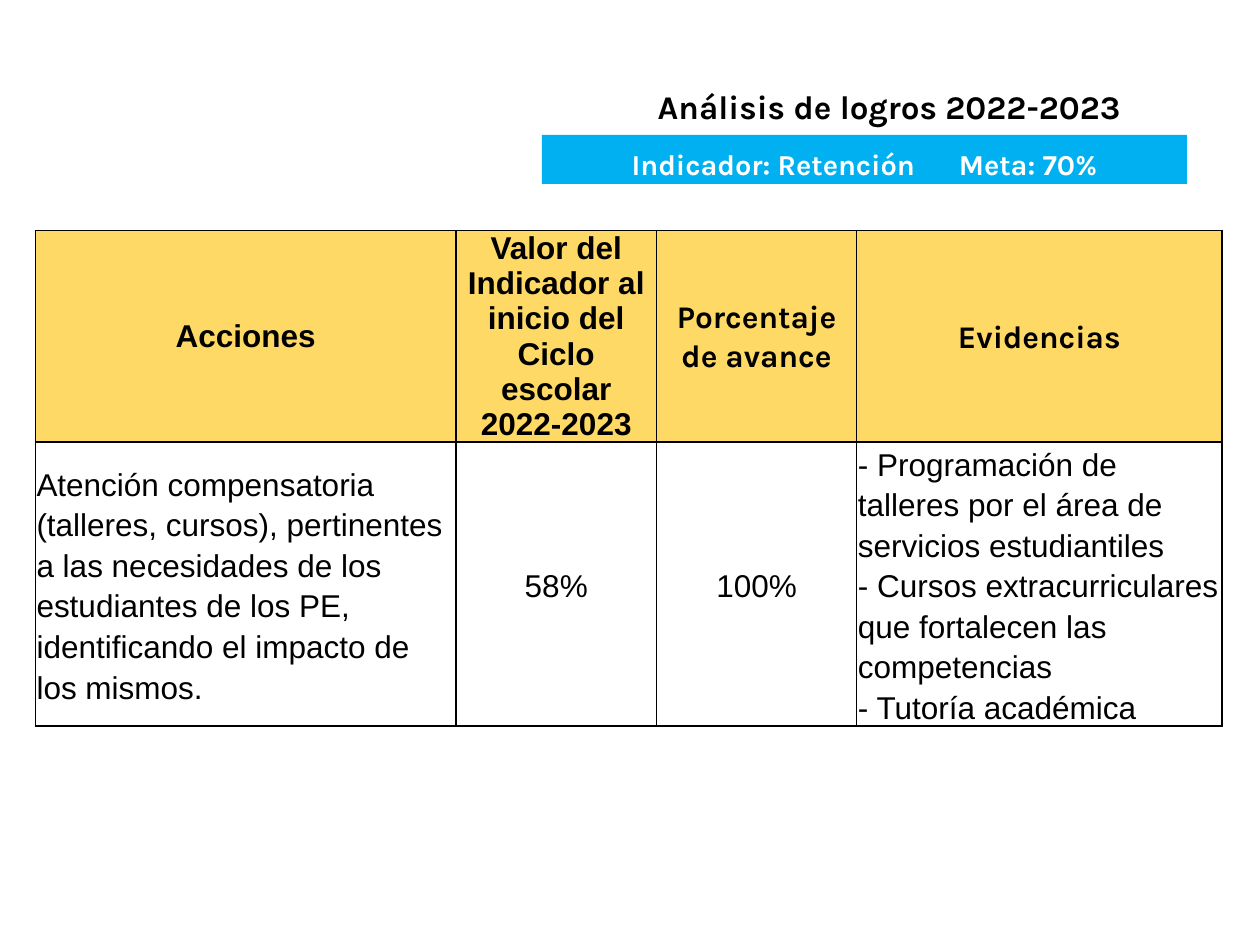
from pptx import Presentation
from pptx import util as u
from pptx.dml.color import RGBColor
from pptx.enum import shapes, text
from pptx.oxml import parse_xml
from pptx.oxml.ns import nsdecls

COLORS = {"white": "FFFFFF", "black": "000000", "gold": "FFD965", "blue": "00B0F0"}
CENTER, LEFT = text.PP_ALIGN.CENTER, text.PP_ALIGN.LEFT
MIDDLE = text.MSO_ANCHOR.MIDDLE
BODY = dict(font="Arial", size=18, bold=False, color="black", spacing=1.15)
HEADER = BODY | dict(bold=True, align=CENTER, spacing=1.0)
KARLA_HEADER = HEADER | dict(font="Karla", spacing=1.07)
TITLE = HEADER | dict(font="Karla", size=18.9, spacing=0.9)
BANNER = TITLE | dict(size=16.5, color="white", spacing=1.15)


class SlideBuilder:
    columns, rows = 100, 75

    def __init__(self, deck):
        self.deck = deck
        self.slide = deck.slides.add_slide(deck.slide_layouts[5])

    def frame(self, left, top, width, height):
        column = self.deck.slide_width / self.columns
        row = self.deck.slide_height / self.rows
        return [u.Emu(round(n * unit)) for n, unit in
                ((left, column), (top, row), (width, column), (height, row))]

    def fill(self, target, color):
        target.fill.solid()
        target.fill.fore_color.rgb = RGBColor.from_string(COLORS[color])

    def add_span(self, para, wording, style):
        para.alignment = style.get("align", LEFT)
        para.line_spacing = style["spacing"]
        span = para.add_run()
        span.text = wording
        values = dict(name=style["font"], size=u.Pt(style["size"]), bold=style["bold"])
        for name, value in values.items():
            setattr(span.font, name, value)
        span.font.color.rgb = RGBColor.from_string(COLORS[style["color"]])
        return span

    def title(self, wording, place, style):
        box = self.slide.shapes.title
        for name, value in zip(("left", "top", "width", "height"), self.frame(*place)):
            setattr(box, name, value)
        self.fill(box, "white")
        box.text_frame.vertical_anchor = MIDDLE
        self.add_span(box.text_frame.paragraphs[0], wording, style)

    def banner(self, label, goal, gap, place, style):
        box = self.slide.shapes.add_shape(shapes.MSO_SHAPE.RECTANGLE, *self.frame(*place))
        box.shadow.inherit = False
        box.line.fill.background()
        self.fill(box, "blue")
        frame = box.text_frame
        settings = dict(word_wrap=True, vertical_anchor=text.MSO_ANCHOR.TOP,
                        auto_size=text.MSO_AUTO_SIZE.SHAPE_TO_FIT_TEXT)
        for name, value in settings.items():
            setattr(frame, name, value)
        para = frame.paragraphs[0]
        self.add_span(para, label, style)
        space = self.add_span(para, " ", style)
        space._r.get_or_add_rPr().set("spc", str(gap * 100))
        self.add_span(para, goal, style)

    def border(self, cell):
        properties = cell._tc.get_or_add_tcPr()
        for position, side in enumerate(("lnL", "lnR", "lnT", "lnB")):
            properties.insert(position, parse_xml(
                f'<a:{side} {nsdecls("a")} w="{u.Pt(1)}"><a:solidFill>'
                f'<a:srgbClr val="{COLORS["black"]}"/></a:solidFill></a:{side}>'))

    def cell(self, cell, wording, style, color, inset):
        self.fill(cell, color)
        self.border(cell)
        settings = dict(margin_left=u.Inches(inset), margin_right=u.Inches(inset),
                        margin_top=0, margin_bottom=0, vertical_anchor=MIDDLE)
        for name, value in settings.items():
            setattr(cell, name, value)
        frame = cell.text_frame
        for index, line in enumerate(wording.split("\n")):
            para = frame.add_paragraph() if index else frame.paragraphs[0]
            self.add_span(para, line, style)

    def table(self, place, widths, heights, content):
        box = self.slide.shapes.add_table(len(heights), len(widths), *self.frame(*place))
        for column, width in zip(box.table.columns, widths):
            column.width = self.frame(0, 0, width, 0)[2]
        for row, height in zip(box.table.rows, heights):
            row.height = self.frame(0, 0, 0, height)[3]
        box.height = self.frame(*place)[3]
        for row, (color, inset, entries) in zip(box.table.rows, content):
            for cell, (wording, style) in zip(row.cells, entries):
                self.cell(cell, wording, style, color, inset)


def main():
    deck = Presentation()
    deck.slide_width, deck.slide_height = u.Inches(10), u.Inches(7.5)
    page = SlideBuilder(deck)
    page.title("Análisis de logros 2022-2023", (44.2, 6.6, 52.8, 4), TITLE)
    centered = BODY | dict(align=CENTER)
    headings = [
        ("Acciones", HEADER),
        ("Valor del Indicador al inicio del Ciclo escolar 2022-2023", HEADER),
        ("Porcentaje de avance", KARLA_HEADER),
        ("Evidencias", KARLA_HEADER),
    ]
    results = [
        ("Atención compensatoria (talleres, cursos), pertinentes a las necesidades "
         "de los estudiantes de los PE, identificando el impacto de los mismos.", BODY),
        ("58%", centered),
        ("100%", centered),
        ("- Programación de talleres por el área de servicios estudiantiles\n"
         "- Cursos extracurriculares que fortalecen las competencias\n"
         "- Tutoría académica", BODY),
    ]
    page.table((2.8, 18.3, 94.3, 41.9), (33.4, 15.9, 15.9, 29), (11.2, 14.1),
               [("gold", 0.06, headings), ("white", 0.01, results)])
    page.banner("Indicador: Retención", "Meta: 70%", 21, (43, 10.7, 51.2, 3.9), BANNER)
    deck.save("out.pptx")


if __name__ == "__main__":
    main()
